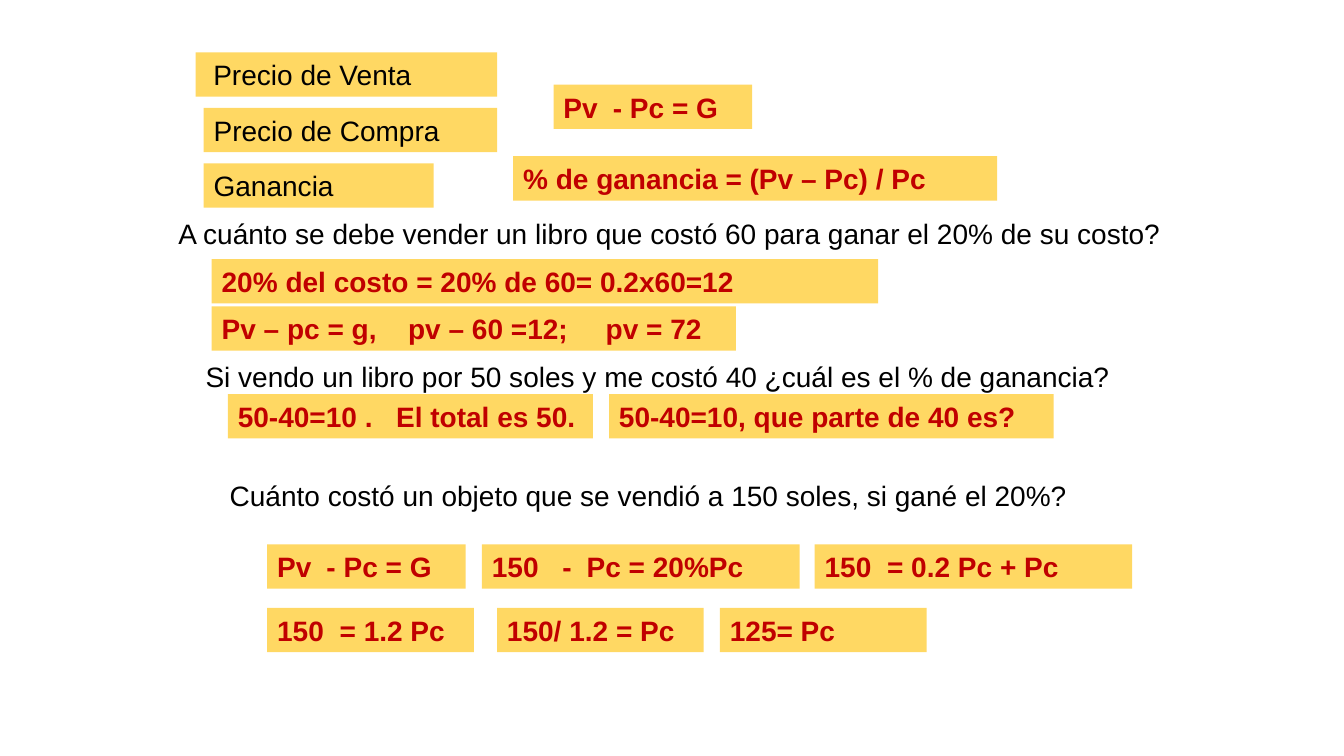
from dataclasses import dataclass

from lxml.etree import SubElement
from pptx import Presentation
from pptx.dml.color import RGBColor
from pptx.enum.shapes import MSO_SHAPE
from pptx.enum.text import MSO_ANCHOR, MSO_AUTO_SIZE, PP_ALIGN
from pptx.oxml.ns import qn
from pptx.util import Emu, Pt

PX = 9144  # EMU, 100 px to the inch
SLIDE_WIDTH, SLIDE_HEIGHT = 1333, 750
LINE_HEIGHT = 44

AMBER = RGBColor(0xFF, 0xC0, 0x00)
AMBER_OPACITY = 61
RED = RGBColor(0xC0, 0x00, 0x00)
BLACK = RGBColor(0x00, 0x00, 0x00)


@dataclass(frozen=True)
class Line:
    """One line of text; tabs are measured from the start of the text."""
    text: str
    left: int
    top: int
    width: int
    tabs: tuple[int, ...] = ()


LABEL_TOP, LABEL_STEP = 52, 55
LABELS = [
    Line(text, left, LABEL_TOP + row * LABEL_STEP, width)
    for row, (text, left, width) in enumerate([
        (" Precio de Venta", 194, 299),
        ("Precio de Compra", 202, 291),
        ("Ganancia", 202, 228),
    ])
]

QUESTIONS = [
    Line("A cuánto se debe vender un libro que costó 60 para ganar el 20% de su costo?", 167, 209, 1000),
    Line("Si vendo un libro por 50 soles y me costó 40 ¿cuál es el % de ganancia?", 194, 351, 973),
    Line("Cuánto costó un objeto que se vendió a 150 soles, si gané el 20%?", 218, 469, 874),
]

PROFIT = "Pv\t- Pc = G"
PROFIT_TABS = (49,)
AFTER_150 = (62,)
FORMULAS = [
    Line(PROFIT, 549, 84, 197, PROFIT_TABS),
    Line("% de ganancia = (Pv – Pc) / Pc", 509, 155, 480),
    Line("20% del costo = 20% de 60= 0.2x60=12", 210, 257, 661),
    Line("Pv – pc = g,\tpv – 60 =12;\tpv = 72", 210, 304, 520, (185, 381)),
    Line("50-40=10 .\tEl total es 50.", 226, 391, 362, (157,)),
    Line("50-40=10, que parte de 40 es?", 604, 391, 441),
    Line(PROFIT, 265, 540, 197, PROFIT_TABS),
    Line("150\t-\tPc = 20%Pc", 478, 540, 315, (70, 94)),
    Line("150\t= 0.2 Pc + Pc", 808, 540, 315, AFTER_150),
    Line("150\t= 1.2 Pc", 265, 603, 205, AFTER_150),
    Line("150/ 1.2 = Pc", 493, 603, 205),
    Line("125= Pc", 714, 603, 205),
]


def bounds(line: Line) -> list[Emu]:
    return [Emu(px * PX) for px in (line.left, line.top, line.width, LINE_HEIGHT)]


def write(frame, line: Line, color: RGBColor, bold: bool) -> None:
    frame.word_wrap = True
    frame.auto_size = MSO_AUTO_SIZE.SHAPE_TO_FIT_TEXT
    frame.vertical_anchor = MSO_ANCHOR.MIDDLE
    frame.text = line.text
    paragraph = frame.paragraphs[0]
    paragraph.alignment = PP_ALIGN.LEFT
    if line.tabs:
        stops = SubElement(paragraph._p.get_or_add_pPr(), qn("a:tabLst"))
        for position in line.tabs:
            SubElement(stops, qn("a:tab"), pos=str(position * PX), algn="l")
    for run in paragraph.runs:
        run.font.name = "Arial"
        run.font.size = Pt(20)
        run.font.bold = bold
        run.font.color.rgb = color


def add_question(shapes, line: Line) -> None:
    write(shapes.add_textbox(*bounds(line)).text_frame, line, BLACK, False)


def add_highlight(shapes, line: Line, color: RGBColor, bold: bool) -> None:
    """Draw a line of text on a translucent amber bar."""
    bar = shapes.add_shape(MSO_SHAPE.RECTANGLE, *bounds(line))
    bar.shadow.inherit = False
    bar.line.fill.background()
    bar.fill.solid()
    bar.fill.fore_color.rgb = AMBER
    amber = bar.fill._xPr.find(qn("a:solidFill"))[0]
    SubElement(amber, qn("a:alpha"), val=str(AMBER_OPACITY * 1000))
    write(bar.text_frame, line, color, bold)


def main() -> None:
    presentation = Presentation()
    presentation.slide_width = Emu(SLIDE_WIDTH * PX)
    presentation.slide_height = Emu(SLIDE_HEIGHT * PX)
    shapes = presentation.slides.add_slide(presentation.slide_layouts[6]).shapes
    for label in LABELS:
        add_highlight(shapes, label, BLACK, bold=False)
    for question in QUESTIONS:
        add_question(shapes, question)
    for formula in FORMULAS:
        add_highlight(shapes, formula, RED, bold=True)
    presentation.save("out.pptx")


if __name__ == "__main__":
    main()
